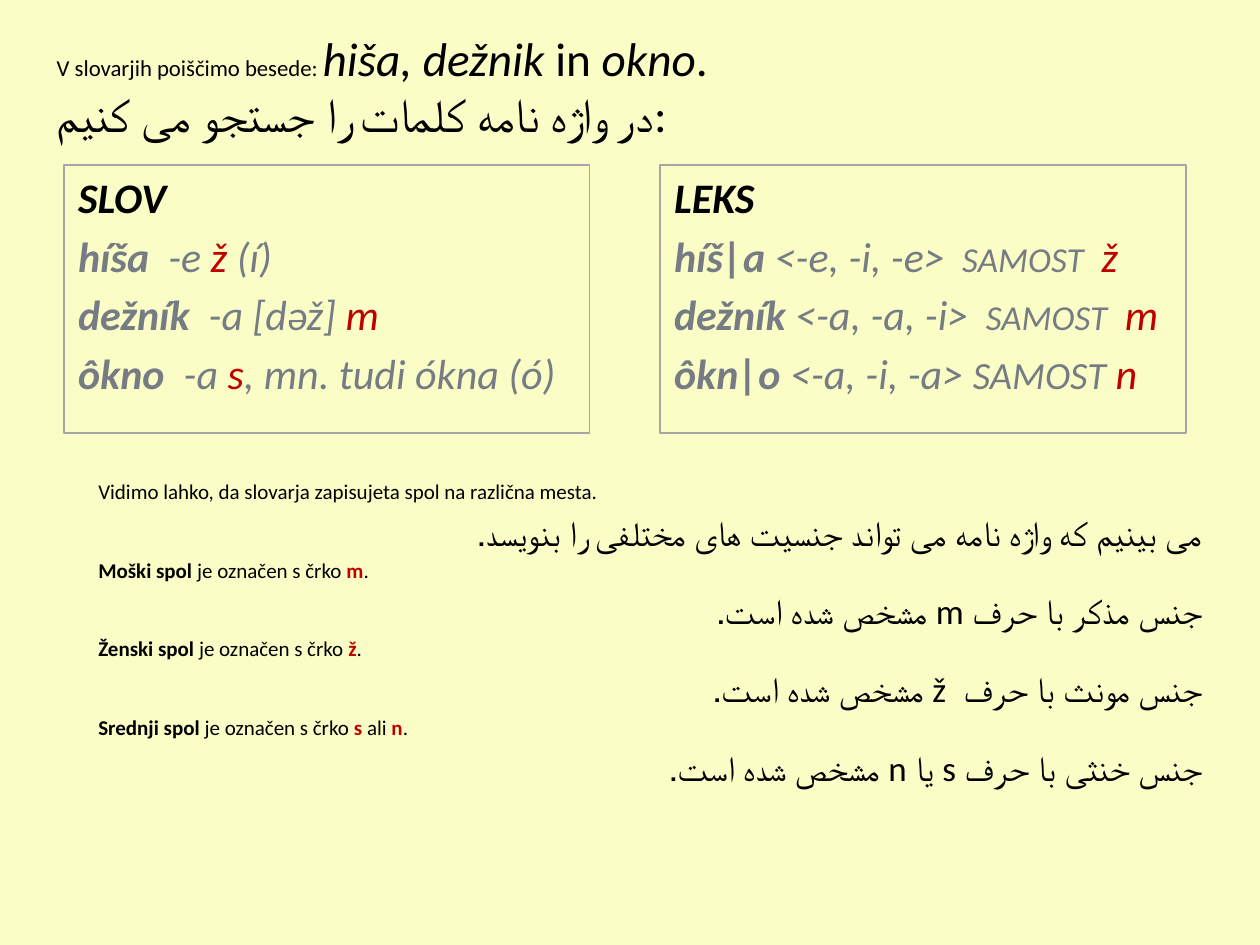
from dataclasses import dataclass

import pptx
import pptx.dml.color
import pptx.enum.text
import pptx.oxml
import pptx.util
from pptx.util import Inches

BACKGROUND = pptx.dml.color.RGBColor(0xFA, 0xFE, 0xC6)
BLACK = pptx.dml.color.RGBColor(0x00, 0x00, 0x00)
GRAY = pptx.dml.color.RGBColor(0x77, 0x7C, 0x84)
RED = pptx.dml.color.RGBColor(0xC0, 0x00, 0x00)
BORDER = pptx.dml.color.RGBColor(0xA6, 0xA6, 0xA6)
ALIGN = pptx.enum.text.PP_ALIGN
ANCHOR = pptx.enum.text.MSO_ANCHOR


@dataclass
class Segment:
    text: str
    color: pptx.dml.color.RGBColor = GRAY
    bold: bool = False
    size: float = 24


@dataclass
class Panel:
    placeholder_index: int
    left: float
    heading: str
    entries: list[list[Segment]]


@dataclass
class Gender:
    name: str
    letters: list[str]
    persian: str


PANELS = [
    Panel(2, 0.51, "SLOV", [
        [Segment("híša", bold=True), Segment("  -e "), Segment("ž ", RED), Segment("(í) ")],
        [Segment("dežník", bold=True), Segment("  -a [dǝž] "), Segment("m", RED)],
        [Segment("ôkno", bold=True), Segment("  -a "), Segment("s", RED),
         Segment(", mn. tudi ókna (ó)")],
    ]),
    Panel(4, 5.24, "LEKS", [
        [Segment("híš|a", bold=True), Segment(" <-e, -i, -e> "),
         Segment(" SAMOST ", size=20), Segment(" ž", RED)],
        [Segment("dežník", bold=True), Segment(" <-a, -a, -i> "),
         Segment(" SAMOST ", size=20), Segment(" m", RED)],
        [Segment("ôkn|o ", bold=True), Segment("<-a, -i, -a> "),
         Segment("SAMOST", size=22), Segment(" n", RED)],
    ]),
]

GENDERS = [
    Gender("Moški", ["m"], "جنس مذکر با حرف m مشخص شده است."),
    Gender("Ženski", ["ž"], "جنس مونث با حرف  ž مشخص شده است."),
    Gender("Srednji", ["s", "n"], "جنس خنثی با حرف s یا n مشخص شده است."),
]


def add_text(paragraph, text: str, *, size: float, color=BLACK,
             bold: bool = False, italic: bool = False) -> None:
    run = paragraph.add_run()
    run.text = text
    font = run.font
    font.name = "Calibri"
    font.size = pptx.util.Pt(size)
    font.color.rgb = color
    font.bold = bold
    font.italic = italic


def prepare(shape, left: float, top: float, width: float, height: float, anchor):
    shape.left, shape.top = Inches(left), Inches(top)
    shape.width, shape.height = Inches(width), Inches(height)
    frame = shape.text_frame
    frame.word_wrap = True
    frame.auto_size = pptx.enum.text.MSO_AUTO_SIZE.NONE
    frame.vertical_anchor = anchor
    return frame


def add_line(frame, space_before: float, right_to_left: bool = False):
    first = frame.paragraphs[0]
    paragraph = frame.add_paragraph() if first.runs else first
    paragraph.alignment = ALIGN.RIGHT if right_to_left else ALIGN.LEFT
    paragraph.space_before = pptx.util.Pt(space_before)
    properties = paragraph._p.get_or_add_pPr()
    properties.set("marL", str(Inches(0.38)))
    properties.set("indent", str(Inches(-0.37)))
    if right_to_left:
        properties.set("rtl", "1")
    properties.append(pptx.oxml.parse_xml(
        '<a:buNone xmlns:a="http://schemas.openxmlformats.org/drawingml/2006/main"/>'))
    return paragraph


def fill_title(shape) -> None:
    frame = prepare(shape, 0.35, 0.21, 9, 0.94, ANCHOR.MIDDLE)
    paragraph = frame.paragraphs[0]
    paragraph.alignment = ALIGN.LEFT
    add_text(paragraph, "V slovarjih poiščimo besede: ", size=13)
    add_text(paragraph, "hiša, dežnik", size=27, italic=True)
    add_text(paragraph, " in ", size=27)
    add_text(paragraph, "okno", size=27, italic=True)
    add_text(paragraph, ".", size=27)
    paragraph.add_line_break()
    add_text(paragraph, "در واژه نامه کلمات را جستجو می کنیم:", size=27)


def fill_panel(shape, panel: Panel) -> None:
    frame = prepare(shape, panel.left, 1.31, 4.17, 2.13, ANCHOR.TOP)
    shape.line.color.rgb = BORDER
    shape.line.width = pptx.util.Pt(1)
    heading = [Segment(panel.heading, BLACK, bold=True)]
    for entry in [heading, *panel.entries]:
        paragraph = add_line(frame, 4.8)
        for segment in entry:
            add_text(paragraph, segment.text, size=segment.size, color=segment.color,
                     bold=segment.bold, italic=True)


def add_persian(frame, text: str) -> None:
    add_text(add_line(frame, 4, right_to_left=True), text, size=20)


def fill_explanation(shape) -> None:
    frame = prepare(shape, 0.67, 3.75, 8.98, 2.83, ANCHOR.TOP)
    add_text(add_line(frame, 2.4),
             "Vidimo lahko, da slovarja zapisujeta spol na različna mesta.", size=12)
    add_persian(frame, "می بینیم که واژه نامه می تواند جنسیت های مختلفی را بنویسد.")
    for gender in GENDERS:
        paragraph = add_line(frame, 2.4)
        add_text(paragraph, f"{gender.name} spol ", size=12, bold=True)
        add_text(paragraph, "je označen s črko ", size=12)
        for position, letter in enumerate(gender.letters):
            if position:
                add_text(paragraph, " ali ", size=12)
            add_text(paragraph, letter, size=12, color=RED, bold=True)
        add_text(paragraph, ".", size=12)
        add_persian(frame, gender.persian)


def main() -> None:
    presentation = pptx.Presentation()
    presentation.slide_width, presentation.slide_height = Inches(10), Inches(7.5)
    slide = presentation.slides.add_slide(presentation.slide_layouts.get_by_name("Comparison"))
    slide.background.fill.solid()
    slide.background.fill.fore_color.rgb = BACKGROUND
    placeholders = {shape.placeholder_format.idx: shape for shape in slide.placeholders}
    fill_title(slide.shapes.title)
    for panel in PANELS:
        fill_panel(placeholders[panel.placeholder_index], panel)
    fill_explanation(placeholders[1])
    unused = placeholders[3].element
    unused.getparent().remove(unused)
    presentation.save("out.pptx")


if __name__ == "__main__":
    main()
